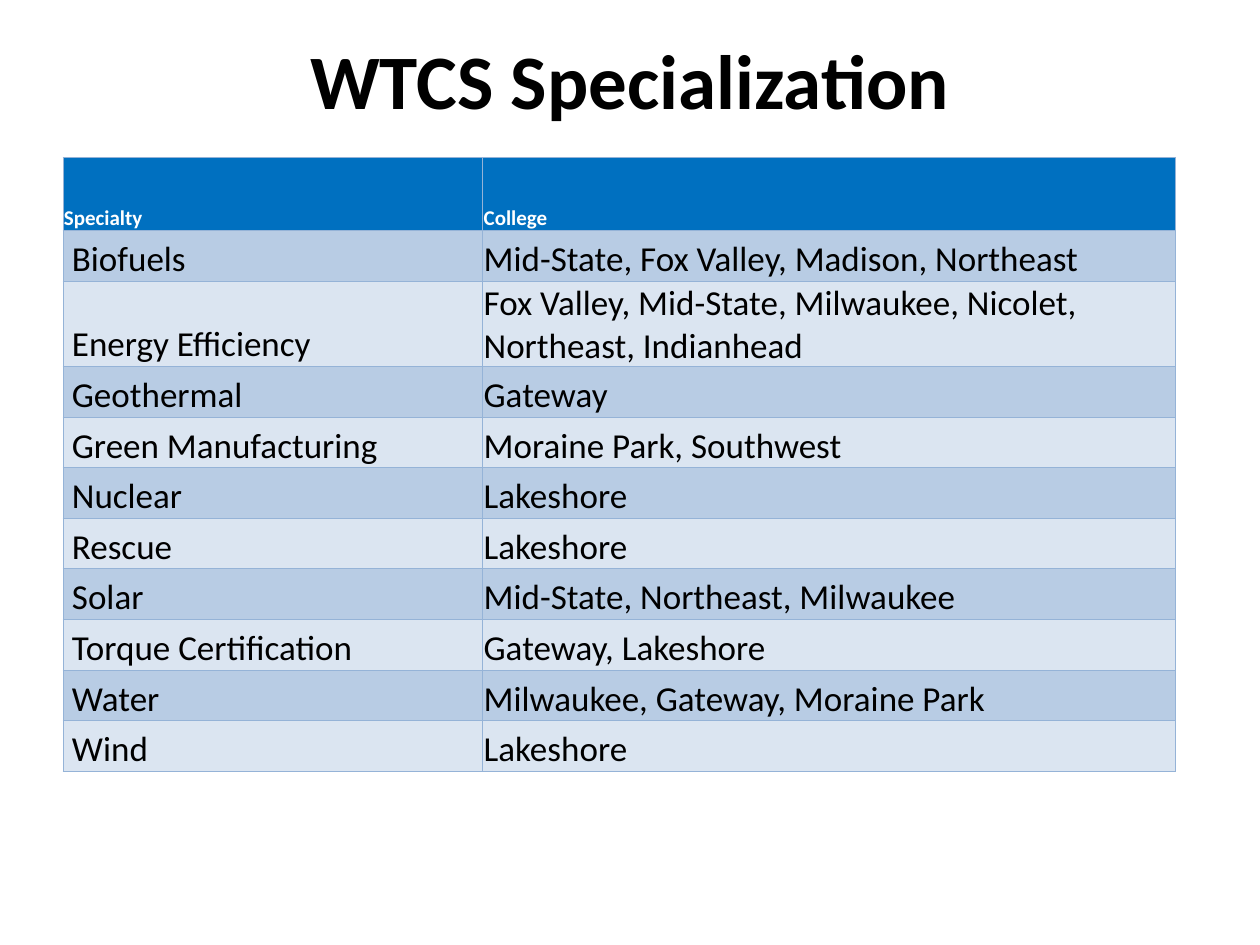
from lxml import etree
from pptx import Presentation
from pptx import util as u
from pptx.dml.color import RGBColor
from pptx.enum import text
from pptx.oxml import ns

BLACK = RGBColor(0x00, 0x00, 0x00)
WHITE = RGBColor(0xFF, 0xFF, 0xFF)
HEADER = RGBColor(0x00, 0x70, 0xC0)
BANDS = (RGBColor(0xB8, 0xCC, 0xE4), RGBColor(0xDB, 0xE5, 0xF1))
BORDER = RGBColor(0x95, 0xB3, 0xD7)

SPECIALTIES = [
    ("Specialty", "College"),
    ("Biofuels", "Mid-State, Fox Valley, Madison, Northeast"),
    ("Energy Efficiency", "Fox Valley, Mid-State, Milwaukee, Nicolet, Northeast, Indianhead"),
    ("Geothermal", "Gateway"),
    ("Green Manufacturing", "Moraine Park, Southwest"),
    ("Nuclear", "Lakeshore"),
    ("Rescue", "Lakeshore"),
    ("Solar", "Mid-State, Northeast, Milwaukee"),
    ("Torque Certification", "Gateway, Lakeshore"),
    ("Water", "Milwaukee, Gateway, Moraine Park"),
    ("Wind", "Lakeshore"),
]


class SlideBuilder:
    """Hold the font and current slide, and add titles and banded tables."""

    def __init__(self, s, font="Calibri"):
        self.s = s
        self.font = font

    def format(self, p, size, color, bold):
        for r in p.runs:
            r.font.name = self.font
            r.font.size = u.Pt(size)
            r.font.bold = bold
            r.font.color.rgb = color

    def title(self, words, x, y, w, h):
        sp = self.s.shapes.add_textbox(x, y, w, h)
        tf = sp.text_frame
        tf.word_wrap = True
        tf.vertical_anchor = text.MSO_ANCHOR.MIDDLE
        tf.text = words
        p = tf.paragraphs[0]
        p.alignment = text.PP_ALIGN.CENTER
        self.format(p, 44, BLACK, True)

    def border(self, cell):
        tc_pr = cell._tc.get_or_add_tcPr()
        for side in ("lnL", "lnR", "lnT", "lnB"):
            ln = etree.SubElement(tc_pr, ns.qn(f"a:{side}"), w=str(u.Pt(0.5)))
            fill = etree.SubElement(ln, ns.qn("a:solidFill"))
            etree.SubElement(fill, ns.qn("a:srgbClr"), val=str(BORDER))

    def cell(self, cell, words, fill, size, color, bold, left):
        cell.text = words
        cell.vertical_anchor = text.MSO_ANCHOR.BOTTOM
        cell.margin_left = left
        cell.margin_right = cell.margin_top = u.Cm(0.02)
        cell.margin_bottom = 0
        self.border(cell)
        cell.fill.solid()
        cell.fill.fore_color.rgb = fill
        self.format(cell.text_frame.paragraphs[0], size, color, bold)

    def table(self, rows, x, y, widths, header_h, row_h):
        height = header_h + row_h * (len(rows) - 1)
        frame = self.s.shapes.add_table(len(rows), len(widths), x, y, sum(widths), height)
        table = frame.table
        for column, width in zip(table.columns, widths):
            column.width = width
        for i, row in enumerate(rows):
            header = i == 0
            table.rows[i].height = header_h if header else row_h
            fill = HEADER if header else BANDS[(i - 1) % 2]
            size, color = (12, WHITE) if header else (20, BLACK)
            for j, words in enumerate(row):
                left = u.Cm(0.18) if j == 0 and not header else u.Cm(0.02)
                self.cell(table.cell(i, j), words, fill, size, color, header, left)


def main():
    prs = Presentation()
    prs.slide_width, prs.slide_height = u.Cm(25.4), u.Cm(19.05)
    s = prs.slides.add_slide(prs.slide_layouts[6])
    builder = SlideBuilder(s)
    builder.title("WTCS Specialization", u.Cm(1.27), u.Cm(0), u.Cm(22.86), u.Cm(3.18))
    builder.table(SPECIALTIES, u.Cm(1.27), u.Cm(3.18),
                  (u.Cm(8.46), u.Cm(13.97)), u.Cm(1.47), u.Cm(1.02))
    prs.save("out.pptx")


if __name__ == "__main__":
    main()
